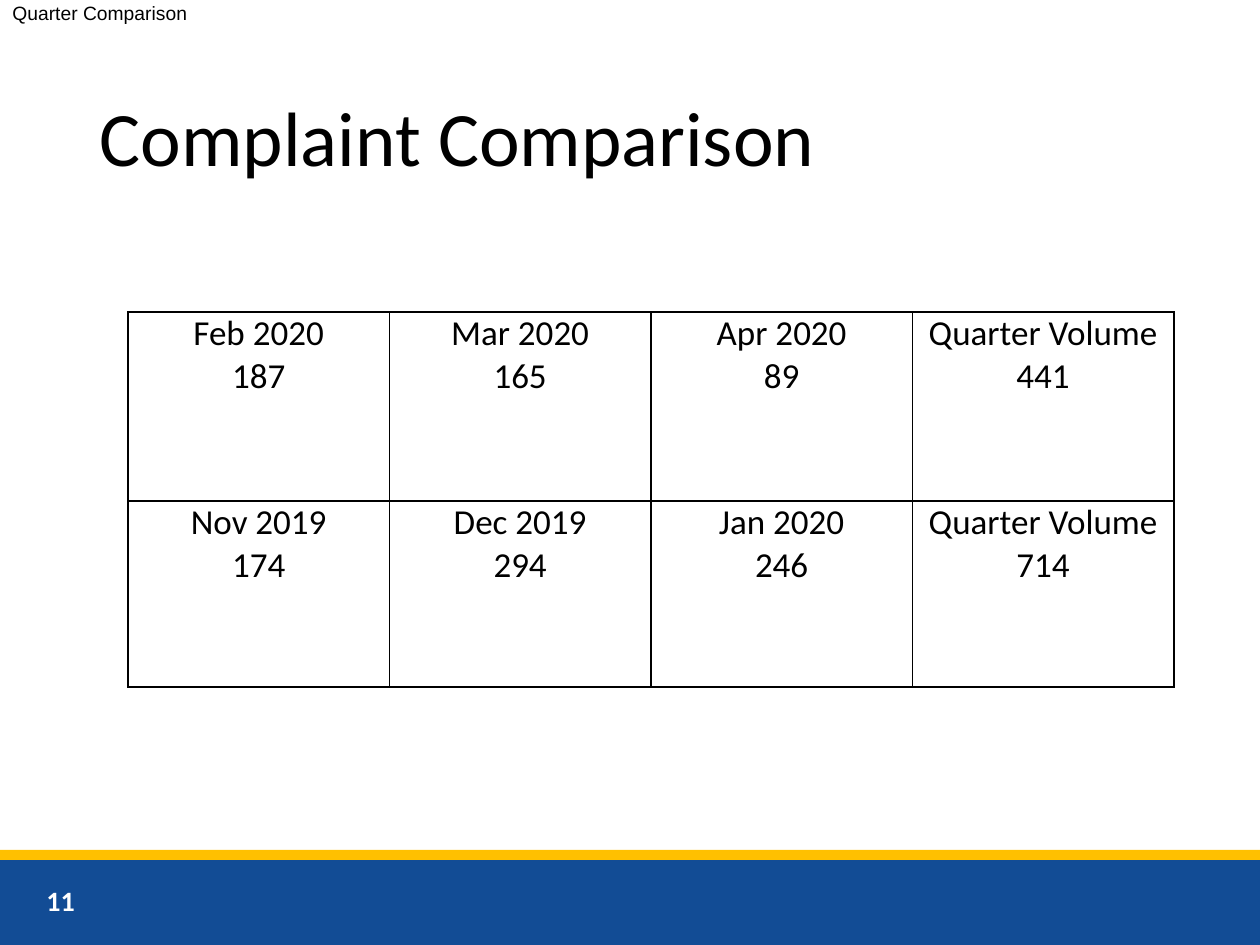
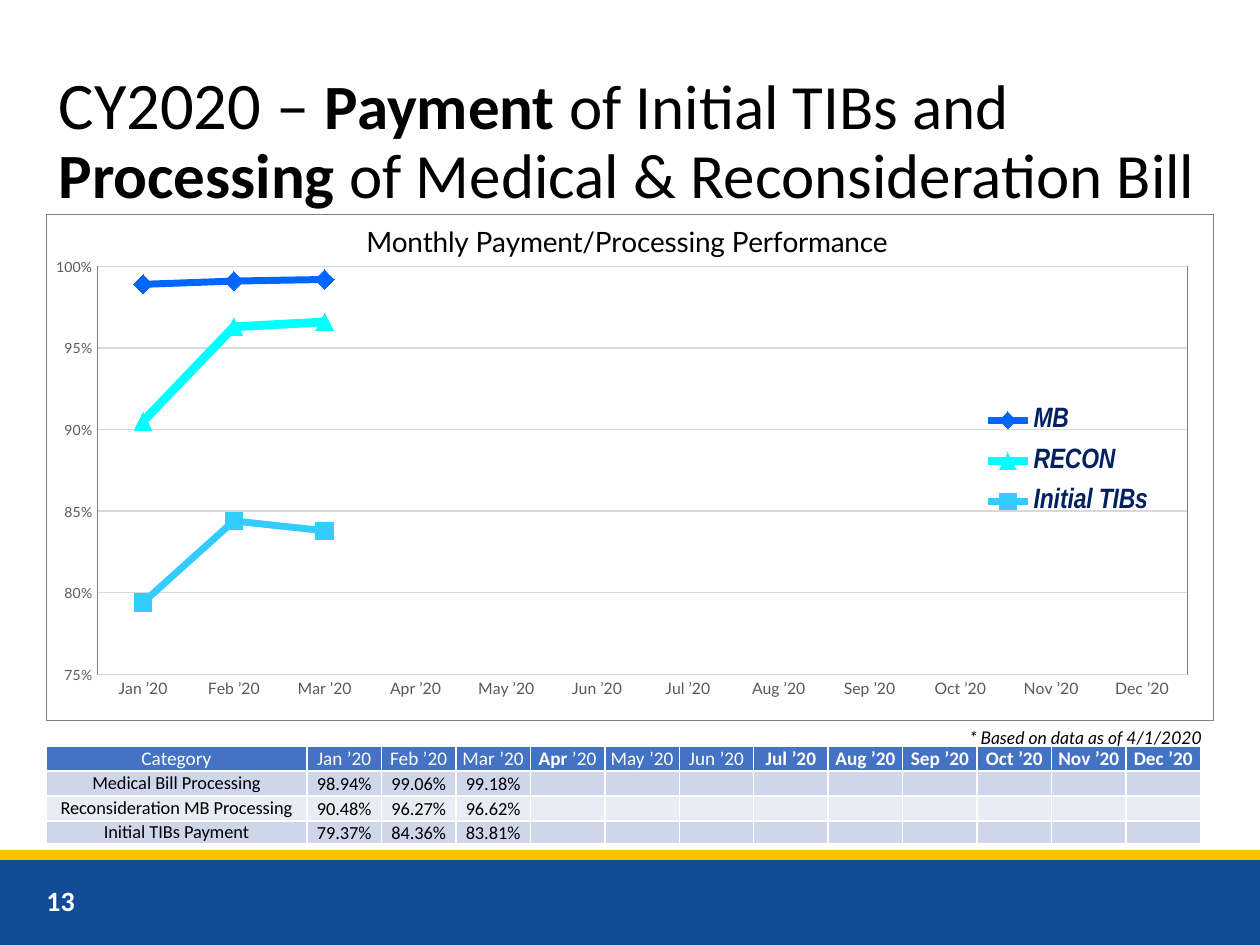
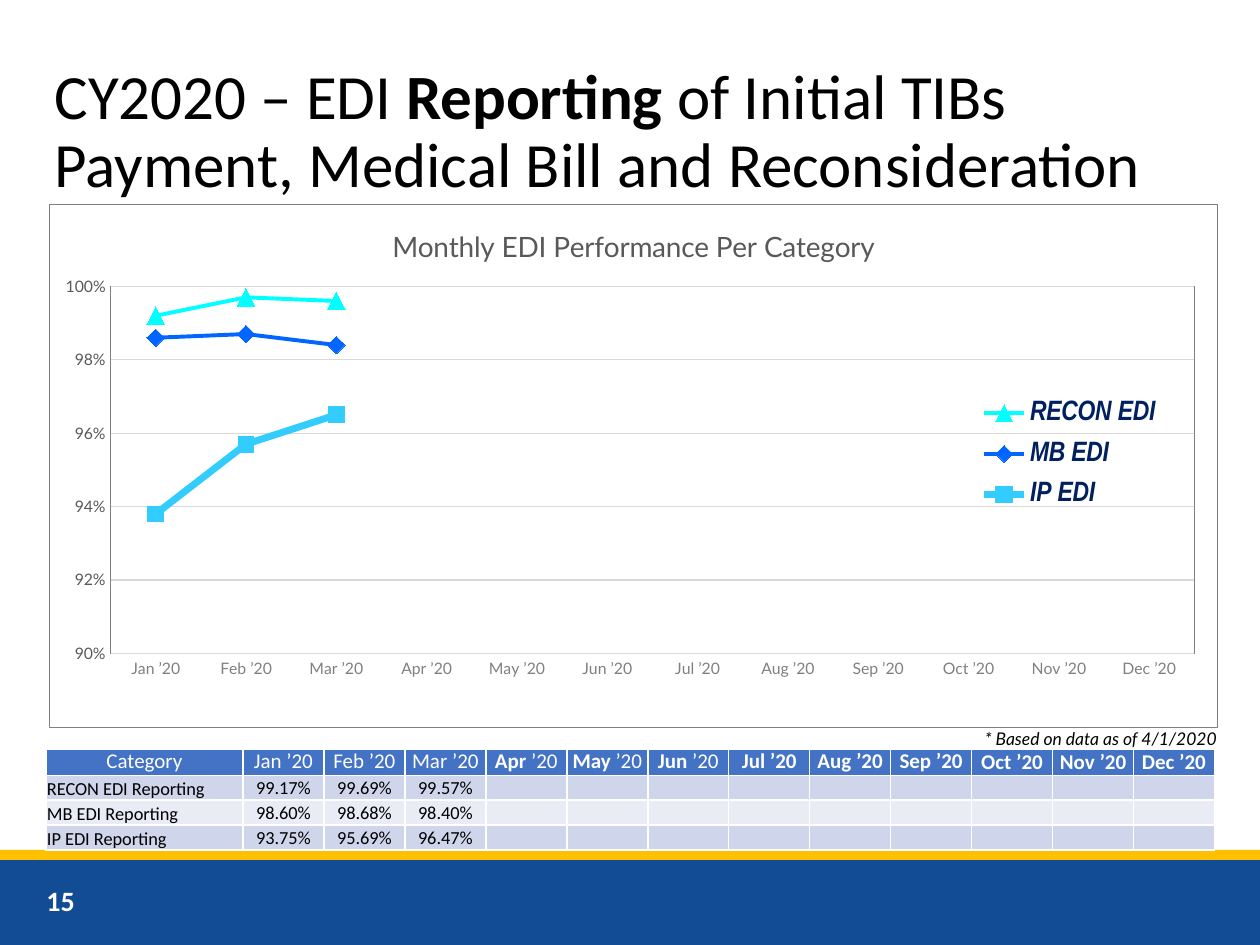
from lxml.etree import SubElement
from pptx import Presentation
from pptx.chart.data import CategoryChartData
from pptx.dml.color import RGBColor
from pptx.enum.chart import XL_CHART_TYPE, XL_LEGEND_POSITION, XL_MARKER_STYLE, XL_TICK_MARK
from pptx.enum.shapes import MSO_SHAPE
from pptx.enum.text import MSO_ANCHOR, MSO_AUTO_SIZE, PP_ALIGN
from pptx.oxml import parse_xml
from pptx.oxml.ns import nsdecls, qn
from pptx.util import Emu, Pt

PX = 914400 / 126
WIDTH, HEIGHT = 1260, 945

BLACK = RGBColor(0x00, 0x00, 0x00)
WHITE = RGBColor(0xFF, 0xFF, 0xFF)
NAVY = RGBColor(0x12, 0x4C, 0x95)
GOLD = RGBColor(0xFF, 0xC0, 0x00)
HEADER_BLUE = RGBColor(0x44, 0x72, 0xC4)
ROW_DARK = RGBColor(0xCF, 0xD5, 0xEA)
ROW_LIGHT = RGBColor(0xE9, 0xEB, 0xF5)
LEGEND_BLUE = RGBColor(0x00, 0x20, 0x60)
GRID_GREY = RGBColor(0xD9, 0xD9, 0xD9)
FRAME_GREY = RGBColor(0x80, 0x80, 0x80)
TEXT_GREY = RGBColor(0x59, 0x59, 0x59)
BLUE = RGBColor(0x00, 0x66, 0xFF)
CYAN = RGBColor(0x00, 0xFF, 0xFF)
SKY = RGBColor(0x33, 0xCC, 0xFF)

MONTHS = [f"{name} ’20" for name in "Jan Feb Mar Apr May Jun Jul Aug Sep Oct Nov Dec".split()]
NOTE = "* Based on data as of 4/1/2020"


def px(length):
    """Turn a length in px into EMU."""
    return Emu(round(length * PX))


def set_font(font, size, color=BLACK, name="Calibri", bold=False, italic=False):
    """Format one font."""
    font.size, font.name, font.bold, font.italic = Pt(size), name, bold, italic
    font.color.rgb = color


def write_text(frame, text, size=11, align=PP_ALIGN.LEFT, spacing=None, bold=False, **style):
    """Write lines of text, where ** switches bold on and off."""
    for number, line in enumerate(text.split("\n")):
        paragraph = frame.add_paragraph() if number else frame.paragraphs[0]
        paragraph.alignment = align
        if spacing:
            paragraph.line_spacing = spacing
        for index, part in enumerate(line.split("**")):
            if part:
                run = paragraph.add_run()
                run.text = part
                set_font(run.font, size, bold=bold or index % 2 == 1, **style)
        if not line:
            SubElement(paragraph._p, qn("a:endParaRPr"), sz=str(round(size * 100)))


def add_text(slide, box, text, margin_top=6, **style):
    """Add a wrapped text box."""
    frame = slide.shapes.add_textbox(*map(px, box)).text_frame
    frame.word_wrap = True
    frame.margin_top = px(margin_top)
    write_text(frame, text, **style)


def add_band(slide, box, color):
    """Add a plain filled band."""
    shape = slide.shapes.add_shape(MSO_SHAPE.RECTANGLE, *map(px, box))
    shape.shadow.inherit = False
    shape.fill.solid()
    shape.fill.fore_color.rgb = color
    shape.line.fill.background()


def add_slide(presentation, number, title, box, size):
    """Add a slide with its title, footer bands and number."""
    slide = presentation.slides.add_slide(presentation.slide_layouts[5])
    add_band(slide, (0, 860, WIDTH, HEIGHT - 860), NAVY)
    add_band(slide, (0, 850, WIDTH, 10), GOLD)
    add_text(slide, (34, 878, 284, 50), str(number), size=16, color=WHITE, bold=True)
    placeholder = slide.shapes.title
    placeholder.left, placeholder.top, placeholder.width, placeholder.height = map(px, box)
    frame = placeholder.text_frame
    frame.auto_size = MSO_AUTO_SIZE.NONE
    frame.word_wrap = True
    frame.vertical_anchor = MSO_ANCHOR.MIDDLE
    write_text(frame, title, size=size, spacing=0.9)
    return slide


def set_borders(cell, color):
    """Draw the four borders of a cell."""
    properties = cell._tc.get_or_add_tcPr()
    for index, tag in enumerate(("lnL", "lnR", "lnT", "lnB")):
        properties.insert(index, parse_xml(
            f'<a:{tag} {nsdecls("a")} w="{Pt(1)}"><a:solidFill>'
            f'<a:srgbClr val="{color}"/></a:solidFill></a:{tag}>'))


def add_grid(slide, box, first_width, row_heights, column_count):
    """Add an unstyled table whose columns after the first are equal."""
    graphic = slide.shapes.add_table(len(row_heights), column_count, *map(px, box))
    table = graphic.table
    table.first_row = table.horz_banding = False
    for index, column in enumerate(table.columns):
        column.width = px((box[2] - first_width) / (column_count - 1) if index else first_width)
    for row, height in zip(table.rows, row_heights):
        row.height = px(height)
    return table


def fill_cell(cell, text, fill=None, border=WHITE, anchor=MSO_ANCHOR.MIDDLE,
              margin=0, margin_top=0, align=PP_ALIGN.CENTER, **style):
    """Write and format one table cell."""
    cell.margin_left = cell.margin_right = px(margin)
    cell.margin_top, cell.margin_bottom = px(margin_top), 0
    cell.vertical_anchor = anchor
    if fill is None:
        cell.fill.background()
    else:
        cell.fill.solid()
        cell.fill.fore_color.rgb = fill
    set_borders(cell, border)
    write_text(cell.text_frame, text, align=align, **style)


def add_quarter_table(slide, box, quarters):
    """Add the table of monthly complaints with quarter totals."""
    table = add_grid(slide, box, box[2] / 4, (189, 186), 4)
    for row, quarter in enumerate(quarters):
        entries = quarter + [("Quarter Volume", sum(count for _, count in quarter))]
        for column, (label, count) in enumerate(entries):
            fill_cell(table.cell(row, column), f"{label}\n{count}", border=BLACK,
                      anchor=MSO_ANCHOR.TOP, margin=9, size=20)


def add_rate_table(slide, box, first_width, row_heights, rates, split_months, header, labels):
    """Add the monthly table of rates with a blue header row."""
    table = add_grid(slide, box, first_width, row_heights, len(MONTHS) + 1)
    for column, text in enumerate(["Category"] + MONTHS):
        style = dict(header)
        if text[:3] in split_months:
            text = text.replace(text[:3], f"**{text[:3]}**")
        if column > 9:
            style.update(margin=1, margin_top=1)
            if header["anchor"] == MSO_ANCHOR.MIDDLE:
                style["anchor"] = MSO_ANCHOR.BOTTOM
        fill_cell(table.cell(0, column), text, HEADER_BLUE,
                  color=WHITE, bold=column > 6, **style)
    for row, (name, values) in enumerate(rates.items(), 1):
        fill = ROW_DARK if row % 2 else ROW_LIGHT
        fill_cell(table.cell(row, 0), name, fill, size=10.5, **labels)
        for column in range(1, len(MONTHS) + 1):
            text = f"{values[column - 1]:.2f}%" if column <= len(values) else ""
            fill_cell(table.cell(row, column), text, fill, margin=1, margin_top=1, size=10.5)


def place_part(element, chart_box, left, top, width=0, height=0):
    """Place a chart part, in px from the corner of the chart."""
    for layout in element.findall(qn("c:layout")):
        element.remove(layout)
    target = '<c:layoutTarget val="inner"/>' if element.tag == qn("c:plotArea") else ""
    chart_width, chart_height = chart_box[2:]
    sizes = {"x": left / chart_width, "y": top / chart_height,
             "w": width / chart_width, "h": height / chart_height}
    modes = '<c:xMode val="edge"/><c:yMode val="edge"/>'
    values = "".join(f'<c:{key} val="{value:.4f}"/>' for key, value in sizes.items() if value)
    position = sum(child.tag in (qn("c:tx"), qn("c:legendPos")) for child in element)
    element.insert(position, parse_xml(
        f'<c:layout {nsdecls("c")}><c:manualLayout>{target}{modes}{values}'
        "</c:manualLayout></c:layout>"))


def frame_properties():
    """Return an unfilled grey outline for a chart part."""
    return parse_xml(
        f'<c:spPr {nsdecls("c", "a")}><a:noFill/><a:ln w="{Pt(0.75)}"><a:solidFill>'
        f'<a:srgbClr val="{FRAME_GREY}"/></a:solidFill></a:ln></c:spPr>')


def style_axes(chart, minimum, step, value_size, category_color):
    """Format both axes and the gridlines."""
    values, categories = chart.value_axis, chart.category_axis
    values.minimum_scale, values.maximum_scale, values.major_unit = minimum, 1, step
    values.tick_labels.number_format = "0%"
    values.tick_labels.number_format_is_linked = False
    values.format.line.fill.background()
    set_font(values.tick_labels.font, value_size, TEXT_GREY, "Lato")
    set_font(categories.tick_labels.font, 9, category_color, "Lato")
    for axis in (values, categories):
        axis.major_tick_mark = axis.minor_tick_mark = XL_TICK_MARK.NONE
    for line in (values.major_gridlines.format.line, categories.format.line):
        line.color.rgb = GRID_GREY
        line.width = Pt(0.75)


def style_series(series, color, width, marker, marker_size):
    """Format one line and its markers."""
    series.smooth = False
    series.format.line.color.rgb = color
    series.format.line.width = Pt(width)
    series.marker.style, series.marker.size = marker, marker_size
    series.marker.format.fill.solid()
    series.marker.format.fill.fore_color.rgb = color
    series.marker.format.line.fill.background()


def add_rate_chart(slide, box, title, title_color, lines, axes, title_at, plot_at, legend_at):
    """Add a line chart of monthly rates."""
    data = CategoryChartData(number_format="0.0%")
    data.categories = MONTHS
    for name, rates, *_ in lines:
        values = [round(rate / 100, 3) for rate in rates]
        data.add_series(name, values + [None] * (len(MONTHS) - len(values)))
    chart = slide.shapes.add_chart(XL_CHART_TYPE.LINE_MARKERS, *map(px, box), data).chart
    set_font(chart.font, 10, name="Lato")
    chart.plots[0].vary_by_categories = False
    write_text(chart.chart_title.text_frame, title, size=16, align=PP_ALIGN.CENTER,
               color=title_color, name="Lato")
    chart.has_legend = True
    chart.legend.position = XL_LEGEND_POSITION.BOTTOM
    chart.legend.include_in_layout = False
    set_font(chart.legend.font, 16, LEGEND_BLUE, "Arial Narrow", bold=True, italic=True)
    style_axes(chart, *axes)
    for series, (_, _, *style) in zip(chart.plots[0].series, lines):
        style_series(series, *style)
    element = chart._chartSpace.find(qn("c:chart"))
    plot_area = element.find(qn("c:plotArea"))
    element.addnext(frame_properties())
    plot_area.append(frame_properties())
    place_part(element.find(qn("c:title")), box, *title_at)
    place_part(plot_area, box, *plot_at)
    place_part(element.find(qn("c:legend")), box, *legend_at)


def add_note(slide, box):
    """Add the right-aligned date note."""
    add_text(slide, box, NOTE, size=10, name="Lato", italic=True, align=PP_ALIGN.RIGHT)


def build_complaints(presentation):
    """Build the complaint comparison slide."""
    slide = add_slide(presentation, 11, "Complaint Comparison", (87, 50, 1086, 183), 44)
    add_quarter_table(slide, (128, 312, 1046, 375), [
        [("Feb 2020", 187), ("Mar 2020", 165), ("Apr 2020", 89)],
        [("Nov 2019", 174), ("Dec 2019", 294), ("Jan 2020", 246)],
    ])
    add_text(slide, (0, 0, WIDTH, 63), "Quarter Comparison", margin_top=1, name="Arial")


def build_payment(presentation):
    """Build the payment and processing slide."""
    title = ("CY2020 – **Payment** of Initial TIBs and "
             "**Processing** of Medical & Reconsideration Bill")
    slide = add_slide(presentation, 13, title, (46, 51, 1187, 183), 36)
    slide.shapes.title.text_frame.paragraphs[0].runs[0].font.size = Pt(38)
    rates = {
        "Medical Bill Processing": (98.94, 99.06, 99.18),
        "Reconsideration MB Processing": (90.48, 96.27, 96.62),
        "Initial TIBs Payment": (79.37, 84.36, 83.81),
    }
    medical, reconsideration, initial = rates.values()
    add_rate_table(slide, (46, 746, 1155, 98), 261, (25, 25, 25, 23), rates, {"Apr"},
                   header={"size": 11, "anchor": MSO_ANCHOR.MIDDLE}, labels={})
    add_note(slide, (641, 721, 573, 34))
    add_rate_chart(
        slide, (46, 214, 1168, 507), "Monthly Payment/Processing Performance", BLACK,
        [("MB", medical, BLUE, 4, XL_MARKER_STYLE.DIAMOND, 11),
         ("RECON", reconsideration, CYAN, 5, XL_MARKER_STYLE.TRIANGLE, 10),
         ("Initial TIBs", initial, SKY, 4, XL_MARKER_STYLE.SQUARE, 10)],
        axes=(0.75, 0.05, 8, TEXT_GREY), title_at=(315, 2),
        plot_at=(51, 52, 1091, 409), legend_at=(929, 178, 187, 138))


def build_reporting(presentation):
    """Build the EDI reporting slide."""
    title = ("CY2020 – EDI **Reporting** of Initial TIBs "
             "Payment, Medical Bill and Reconsideration")
    slide = add_slide(presentation, 15, title, (42, 51, 1188, 165), 36)
    rates = {
        "RECON EDI Reporting": (99.17, 99.69, 99.57),
        "MB EDI Reporting": (98.60, 98.68, 98.40),
        "IP EDI Reporting": (93.75, 95.69, 96.47),
    }
    reconsideration, medical, initial = rates.values()
    add_rate_table(slide, (46, 749, 1169, 100), 197, (25,) * 4, rates, {"Apr", "May", "Jun"},
                   header={"size": 12, "anchor": MSO_ANCHOR.TOP},
                   labels={"anchor": MSO_ANCHOR.BOTTOM, "align": PP_ALIGN.LEFT, "margin": 1})
    add_note(slide, (656, 722, 573, 55))
    add_rate_chart(
        slide, (49, 204, 1169, 524), "Monthly EDI Performance Per Category", TEXT_GREY,
        [("RECON EDI", reconsideration, CYAN, 2.25, XL_MARKER_STYLE.TRIANGLE, 10),
         ("MB EDI", medical, BLUE, 2.25, XL_MARKER_STYLE.DIAMOND, 10),
         ("IP EDI", initial, SKY, 4, XL_MARKER_STYLE.SQUARE, 9)],
        axes=(0.9, 0.02, 9, FRAME_GREY), title_at=(338, 17),
        plot_at=(61, 82, 1085, 368), legend_at=(928, 181, 187, 138))


def main():
    """Build and save the presentation."""
    presentation = Presentation()
    presentation.slide_width, presentation.slide_height = px(WIDTH), px(HEIGHT)
    build_complaints(presentation)
    build_payment(presentation)
    build_reporting(presentation)
    presentation.save("out.pptx")


if __name__ == "__main__":
    main()
